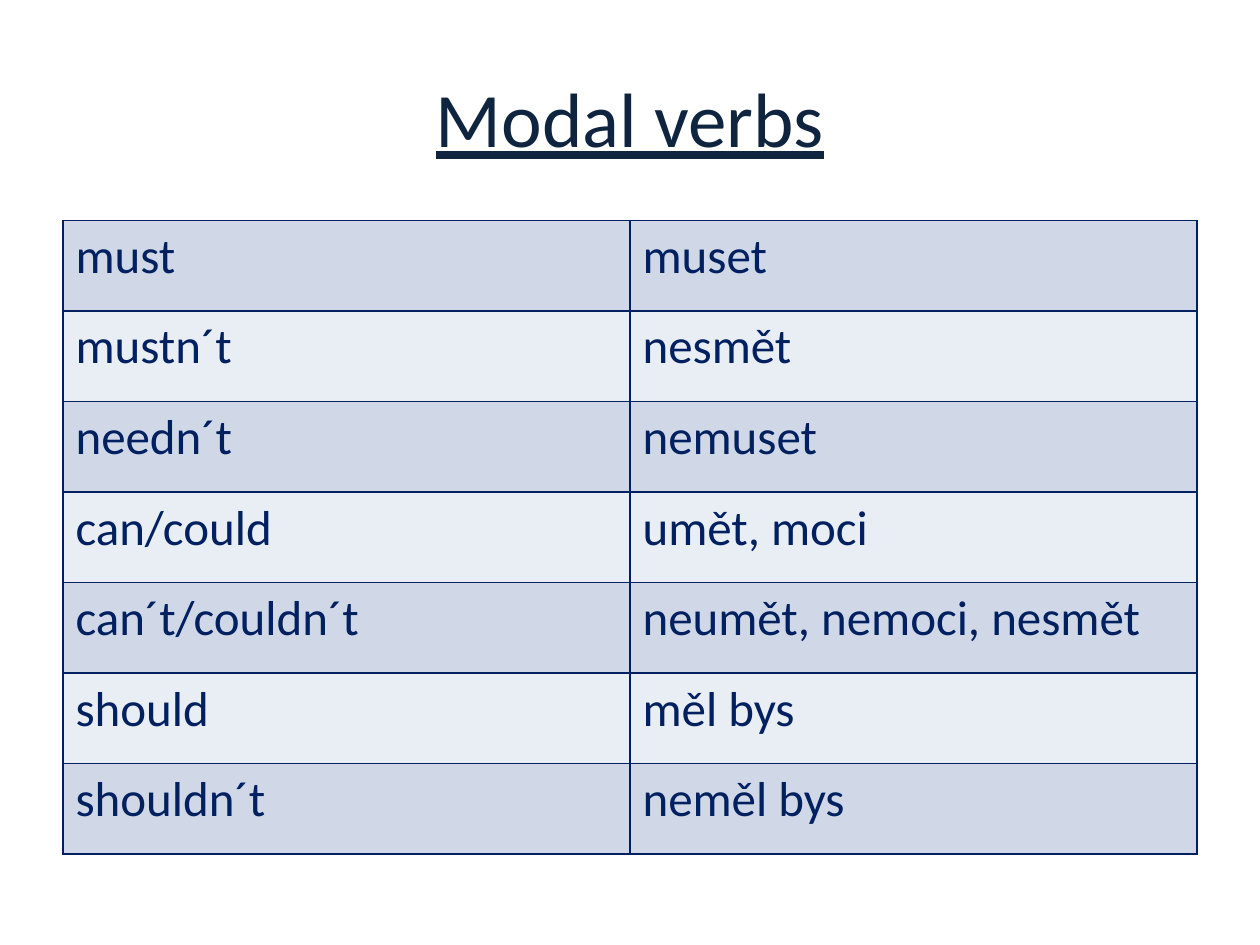
from dataclasses import dataclass

from lxml import etree
from pptx import Presentation
from pptx import util as u
from pptx.dml import color
from pptx.enum import text
from pptx.oxml import ns

FONT = "Calibri"
NAVY = "002060"
TITLE_COLOUR = "0F243E"
BANDS = ("D0D8E8", "E9EDF4")
LEFT, WIDTH = 0.5, 9
TABLE_TOP, TABLE_HEIGHT = 1.75, 5.03


@dataclass(frozen=True)
class Verb:
    english: str
    czech: str


VERBS = [
    Verb("must", "muset"),
    Verb("mustn´t", "nesmět"),
    Verb("needn´t", "nemuset"),
    Verb("can/could", "umět, moci"),
    Verb("can´t/couldn´t", "neumět, nemoci, nesmět"),
    Verb("should", "měl bys"),
    Verb("shouldn´t", "neměl bys"),
]


def paint(target, colour: str) -> None:
    target.solid()
    target.fore_color.rgb = color.RGBColor.from_string(colour)


def add_span(para, words: str, size: float, colour: str, underline: bool = False) -> None:
    span = para.add_run()
    span.text = words
    span.font.name = FONT
    span.font.size = u.Pt(size)
    span.font.underline = underline or None
    paint(span.font.fill, colour)


def add_borders(cell, colour: str, points: float) -> None:
    properties = cell._tc.get_or_add_tcPr()
    for position, side in enumerate(("lnL", "lnR", "lnT", "lnB")):
        line = etree.Element(ns.qn(f"a:{side}"), w=str(u.Pt(points)))
        fill = etree.SubElement(line, ns.qn("a:solidFill"))
        etree.SubElement(fill, ns.qn("a:srgbClr"), val=colour)
        properties.insert(position, line)


def add_title(page, words: str) -> None:
    box = page.shapes.add_textbox(
        u.Inches(LEFT), u.Inches(0.3), u.Inches(WIDTH), u.Inches(1.25)
    )
    frame = box.text_frame
    frame.word_wrap = True
    frame.vertical_anchor = text.MSO_ANCHOR.MIDDLE
    para = frame.paragraphs[0]
    para.alignment = text.PP_ALIGN.CENTER
    add_span(para, words, 44, TITLE_COLOUR, underline=True)


def add_verb_table(page, verbs: list[Verb]) -> None:
    table = page.shapes.add_table(
        len(verbs), 2, u.Inches(LEFT), u.Inches(TABLE_TOP),
        u.Inches(WIDTH), u.Inches(TABLE_HEIGHT),
    ).table
    table.first_row = False
    table.horz_banding = False
    for row, verb in enumerate(verbs):
        for column, words in enumerate((verb.english, verb.czech)):
            cell = table.cell(row, column)
            paint(cell.fill, BANDS[row % 2])
            add_borders(cell, NAVY, 1)
            add_span(cell.text_frame.paragraphs[0], words, 28, NAVY)


def main() -> None:
    deck = Presentation()
    deck.slide_width = u.Inches(10)
    deck.slide_height = u.Inches(7.5)
    page = deck.slides.add_slide(deck.slide_layouts[6])
    add_title(page, "Modal verbs")
    add_verb_table(page, VERBS)
    deck.save("out.pptx")


if __name__ == "__main__":
    main()
